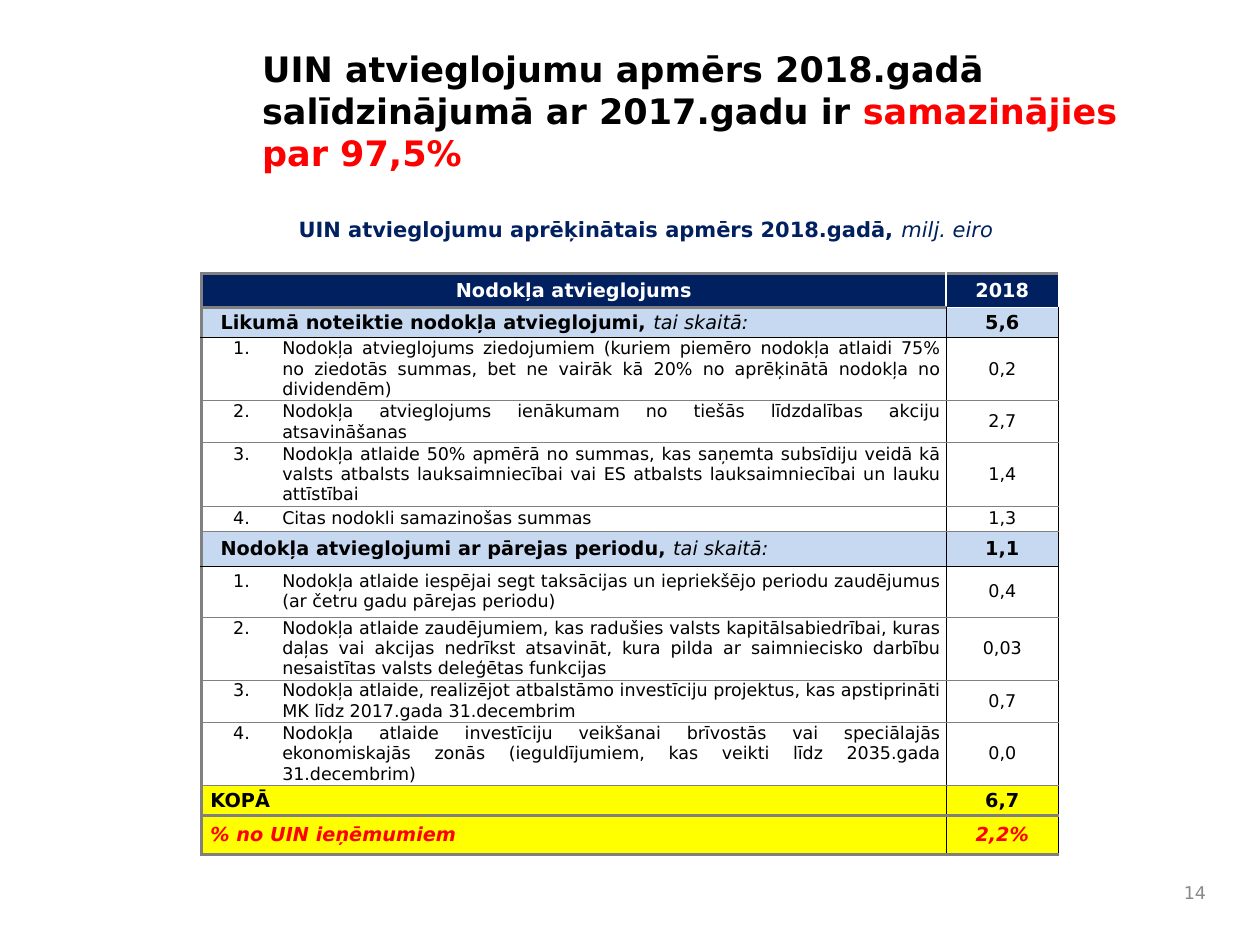
from lxml import etree
from pptx import Presentation
from pptx.dml.color import RGBColor
from pptx.enum.text import MSO_ANCHOR as Anchor, MSO_AUTO_SIZE as AutoSize, PP_ALIGN as Align
from pptx.oxml.ns import qn
from pptx.util import Inches, Pt

FONT = "DejaVu Sans"
BLACK = RGBColor(0x00, 0x00, 0x00)
WHITE = RGBColor(0xFF, 0xFF, 0xFF)
NAVY = RGBColor(0x00, 0x20, 0x60)
LIGHT_BLUE = RGBColor(0xC6, 0xD9, 0xF1)
YELLOW = RGBColor(0xFF, 0xFF, 0x00)
RED = RGBColor(0xFF, 0x00, 0x00)
GREY = RGBColor(0x80, 0x80, 0x80)
NUMBER_GREY = RGBColor(0x89, 0x89, 0x89)


def write(paragraph, text, size, color, bold=False, italic=False, align=Align.LEFT):
    paragraph.add_run().text = text
    paragraph.alignment = align
    font = paragraph.font
    font.name, font.size, font.bold, font.italic = FONT, Pt(size), bold, italic
    font.color.rgb = color


def set_borders(cell, borders):
    """Borders run left, right, top, bottom, each a (color, width) pair."""
    properties = cell._tc.get_or_add_tcPr()
    for index, (side, (color, width)) in enumerate(zip("LRTB", borders)):
        line = etree.Element(qn(f"a:ln{side}"), w=str(Pt(width)))
        fill = etree.SubElement(line, qn("a:solidFill"))
        etree.SubElement(fill, qn("a:srgbClr"), val=str(color))
        properties.insert(index, line)


presentation = Presentation()
presentation.slide_width, presentation.slide_height = Inches(10), Inches(7.5)
slide = presentation.slides.add_slide(presentation.slide_layouts[5])

# Title
title = slide.shapes.title
title.left, title.top = Inches(1.98), Inches(0.33)
title.width, title.height = Inches(7.36), Inches(1.22)
title.text_frame.auto_size = AutoSize.NONE
title.text_frame.vertical_anchor = Anchor.TOP
paragraph = title.text_frame.paragraphs[0]
write(paragraph, "UIN atvieglojumu apmērs 2018.gadā salīdzinājumā ar 2017.gadu ir ",
      20, BLACK, bold=True)
run = paragraph.add_run()
run.text = "samazinājies par 97,5%"
run.font.color.rgb = RED

# Table caption
caption = slide.shapes.add_textbox(Inches(1.45), Inches(1.67), Inches(7.35), Inches(0.3))
caption.text_frame.word_wrap = True
paragraph = caption.text_frame.paragraphs[0]
paragraph.space_after = Pt(6)
write(paragraph, "UIN atvieglojumu aprēķinātais apmērs 2018.gadā, ",
      12, NAVY, bold=True, align=Align.CENTER)
run = paragraph.add_run()
run.text = "milj. eiro"
run.font.bold, run.font.italic = False, True

# Table rows: kind, label, value, height
rows = [
    ("header", "Nodokļa atvieglojums", "2018", 0.27),
    ("group", "Likumā noteiktie nodokļa atvieglojumi, ", "5,6", 0.24),
    ("item", "Nodokļa atvieglojums ziedojumiem (kuriem piemēro nodokļa atlaidi 75% no ziedotās "
     "summas, bet ne vairāk kā 20% no aprēķinātā nodokļa no dividendēm)", "0,2", 0.5),
    ("item", "Nodokļa atvieglojums ienākumam no tiešās līdzdalības akciju atsavināšanas",
     "2,7", 0.33),
    ("item", "Nodokļa atlaide 50% apmērā no summas, kas saņemta subsīdiju veidā kā valsts "
     "atbalsts lauksaimniecībai vai ES atbalsts lauksaimniecībai un lauku attīstībai",
     "1,4", 0.5),
    ("item", "Citas nodokli samazinošas summas", "1,3", 0.2),
    ("group", "Nodokļa atvieglojumi ar pārejas periodu, ", "1,1", 0.28),
    ("item", "Nodokļa atlaide iespējai segt taksācijas un iepriekšējo periodu zaudējumus "
     "(ar četru gadu pārejas periodu)", "0,4", 0.4),
    ("item", "Nodokļa atlaide zaudējumiem, kas radušies valsts kapitālsabiedrībai, kuras daļas "
     "vai akcijas nedrīkst atsavināt, kura pilda ar saimniecisko darbību nesaistītas valsts "
     "deleģētas funkcijas", "0,03", 0.5),
    ("item", "Nodokļa atlaide, realizējot atbalstāmo investīciju projektus, kas apstiprināti "
     "MK līdz 2017.gada 31.decembrim", "0,7", 0.33),
    ("item", "Nodokļa atlaide investīciju veikšanai brīvostās vai speciālajās ekonomiskajās "
     "zonās (ieguldījumiem, kas veikti līdz 2035.gada 31.decembrim)", "0,0", 0.5),
    ("total", "KOPĀ", "6,7", 0.24),
    ("share", "% no UIN ieņēmumiem", "2,2%", 0.31),
]
# Kind: fill, text color, size, bold, italic, label alignment, left margin, indent
styles = {
    "header": (NAVY, WHITE, 11, True, False, Align.CENTER, 0, 0),
    "group": (LIGHT_BLUE, BLACK, 11, True, False, Align.LEFT, 0.1, 0),
    "item": (WHITE, BLACK, 10, False, False, Align.JUSTIFY, 0.59, -0.39),
    "total": (YELLOW, BLACK, 11, True, False, Align.JUSTIFY, 0.32, -0.3),
    "share": (YELLOW, RED, 11, True, True, Align.JUSTIFY, 0.32, -0.3),
}
# Rule below each kind of row
rules = {"header": (GREY, 1.5), "group": (BLACK, 0.5), "item": (GREY, 0.5),
         "total": (GREY, 1.5), "share": (GREY, 1.5)}

table = slide.shapes.add_table(len(rows), 2, Inches(1.6), Inches(2.17),
                               Inches(6.8), Inches(4.61)).table
table.first_row = table.horz_banding = False
table.columns[0].width, table.columns[1].width = Inches(5.91), Inches(0.89)

item_number = 0
top_rules = [(GREY, 1.5)] * 2
for row_index, (kind, label, value, height) in enumerate(rows):
    table.rows[row_index].height = Inches(height)
    fill, color, size, bold, italic, label_align, margin, indent = styles[kind]
    item_number = item_number + 1 if kind == "item" else 0
    is_header = kind == "header"
    divider = (WHITE, 1) if is_header else (BLACK, 0.5)
    right_edge = (WHITE if is_header else BLACK, 0.5)
    bottom_rules = [rules[kind], (WHITE, 1) if is_header else rules[kind]]
    sides = [((GREY, 1.5), divider), (divider, right_edge)]

    for column, (text, align) in enumerate([(label, label_align), (value, Align.CENTER)]):
        cell = table.cell(row_index, column)
        cell.fill.solid()
        cell.fill.fore_color.rgb = fill
        cell.vertical_anchor = Anchor.MIDDLE
        cell.margin_left = cell.margin_right = Inches(0.05)
        cell.margin_top = cell.margin_bottom = 0
        set_borders(cell, [*sides[column], top_rules[column], bottom_rules[column]])

        paragraph = cell.text_frame.paragraphs[0]
        if column == 0:
            properties = paragraph._p.get_or_add_pPr()
            properties.set("marL", str(Inches(margin)))
            properties.set("indent", str(Inches(indent)))
            if item_number:
                etree.SubElement(properties, qn("a:buFont"), typeface="+mj-lt")
                etree.SubElement(properties, qn("a:buAutoNum"), type="arabicPeriod",
                                 startAt=str(item_number))
        write(paragraph, text, size, color, bold, italic, align)
        if kind == "group" and column == 0:
            run = paragraph.add_run()
            run.text = "tai skaitā:"
            run.font.bold, run.font.italic = False, True
    top_rules = bottom_rules

# Slide number
number = slide.shapes.add_textbox(Inches(9.21), Inches(6.92), Inches(0.46), Inches(0.33))
number.text_frame.word_wrap = True
number.text_frame.vertical_anchor = Anchor.MIDDLE
write(number.text_frame.paragraphs[0], "14", 10, NUMBER_GREY, align=Align.RIGHT)

presentation.save("out.pptx")
